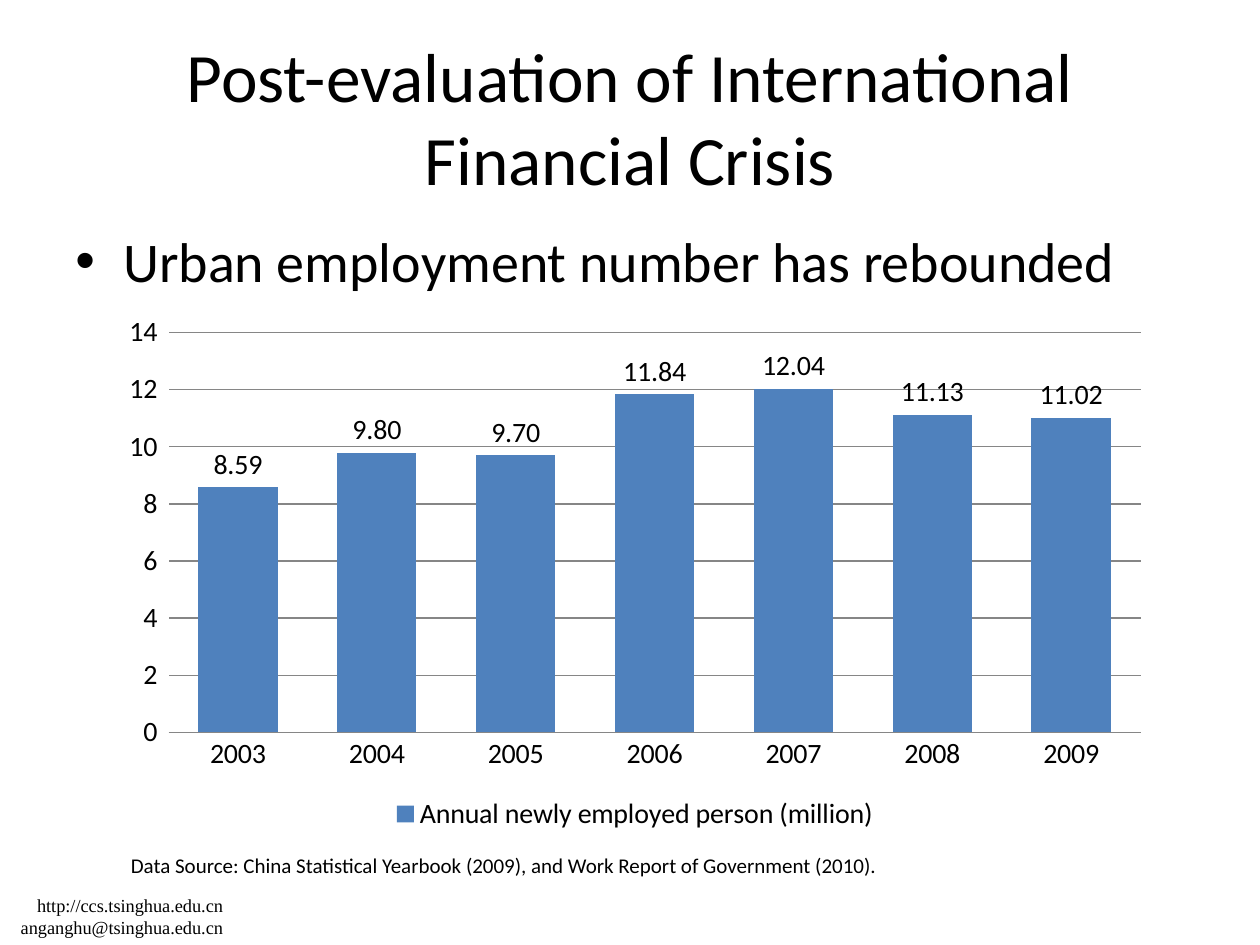
"""Build a slide on the rebound of urban employment, with a column chart."""
from lxml import etree
from pptx import Presentation
from pptx.chart.data import CategoryChartData
from pptx.dml.color import RGBColor
from pptx.enum import chart as chart_enum, text as text_enum
from pptx.oxml.ns import qn
from pptx.util import Inches, Pt

BLACK = RGBColor(0, 0, 0)
BLUE = RGBColor(0x4F, 0x81, 0xBD)
GRAY = RGBColor(0x86, 0x86, 0x86)
FONT = "Calibri"

TITLE = "Post-evaluation of International Financial Crisis"
POINT = "Urban employment number has rebounded"
SOURCE = "Data Source: China Statistical Yearbook (2009), and Work Report of Government (2010)."
CONTACT = ["http://ccs.tsinghua.edu.cn", "anganghu@tsinghua.edu.cn"]
SERIES = "Annual newly employed person (million)"
EMPLOYED = {"2003": 8.59, "2004": 9.8, "2005": 9.7, "2006": 11.84,
            "2007": 12.04, "2008": 11.13, "2009": 11.02}


def style_font(font, size, name=FONT):
    font.size, font.name = Pt(size), name
    font.color.rgb = BLACK


def add_text(slide, lines, box, size, name=FONT, align=text_enum.PP_ALIGN.LEFT,
             anchor=text_enum.MSO_ANCHOR.TOP, bullet=None):
    frame = slide.shapes.add_textbox(*map(Inches, box)).text_frame
    frame.word_wrap = True
    frame.vertical_anchor = anchor
    frame.text = "\n".join(lines)
    for paragraph in frame.paragraphs:
        paragraph.alignment = align
        if bullet:
            properties = paragraph._p.get_or_add_pPr()
            properties.set("marL", str(Inches(0.38)))
            properties.set("indent", str(-Inches(0.38)))
            etree.SubElement(properties, qn("a:buFont"), typeface="Arial")
            etree.SubElement(properties, qn("a:buChar"), char=bullet)
        for run in paragraph.runs:
            style_font(run.font, size, name)


def add_employment_chart(slide, box):
    data = CategoryChartData(number_format="0.00")
    data.categories = list(EMPLOYED)
    data.add_series(SERIES, list(EMPLOYED.values()))
    chart = slide.shapes.add_chart(
        chart_enum.XL_CHART_TYPE.COLUMN_CLUSTERED, *map(Inches, box), data).chart
    style_font(chart.font, 16)
    chart.has_title = False
    chart.has_legend = True
    chart.legend.position = chart_enum.XL_LEGEND_POSITION.BOTTOM
    chart.legend.include_in_layout = False
    style_font(chart.legend.font, 16)

    for axis in (chart.category_axis, chart.value_axis):
        axis.major_tick_mark = chart_enum.XL_TICK_MARK.NONE
        style_font(axis.tick_labels.font, 16)
    chart.category_axis.format.line.color.rgb = GRAY
    value_axis = chart.value_axis
    value_axis.minimum_scale, value_axis.maximum_scale, value_axis.major_unit = 0, 14, 2
    value_axis.tick_labels.number_format = "0_ "
    value_axis.tick_labels.number_format_is_linked = False
    value_axis.format.line.fill.background()
    value_axis.major_gridlines.format.line.color.rgb = GRAY

    plot = chart.plots[0]
    plot.gap_width, plot.overlap, plot.vary_by_categories = 75, -25, False
    series = plot.series[0]
    series.format.fill.solid()
    series.format.fill.fore_color.rgb = BLUE
    labels = series.data_labels
    labels.show_value = True
    labels.number_format = "0.00"
    labels.number_format_is_linked = False
    labels.position = chart_enum.XL_LABEL_POSITION.OUTSIDE_END
    style_font(labels.font, 16)


def main():
    presentation = Presentation()
    presentation.slide_width, presentation.slide_height = Inches(10), Inches(7.5)
    slide = presentation.slides.add_slide(presentation.slide_layouts[6])
    add_text(slide, CONTACT, (-0.08, 7.05, 1.95, 0.45), 10.5,
             name="Times New Roman", align=text_enum.PP_ALIGN.RIGHT)
    add_text(slide, [TITLE], (0.5, 0.3, 9, 1.25), 39.6,
             align=text_enum.PP_ALIGN.CENTER, anchor=text_enum.MSO_ANCHOR.MIDDLE)
    add_text(slide, [POINT], (0.5, 1.75, 9, 4.95), 32, bullet="•")
    add_employment_chart(slide, (0.86, 2.42, 8.36, 4.22))
    add_text(slide, [SOURCE], (0.94, 6.72, 7.58, 0.3), 12)
    presentation.save("out.pptx")


if __name__ == "__main__":
    main()
